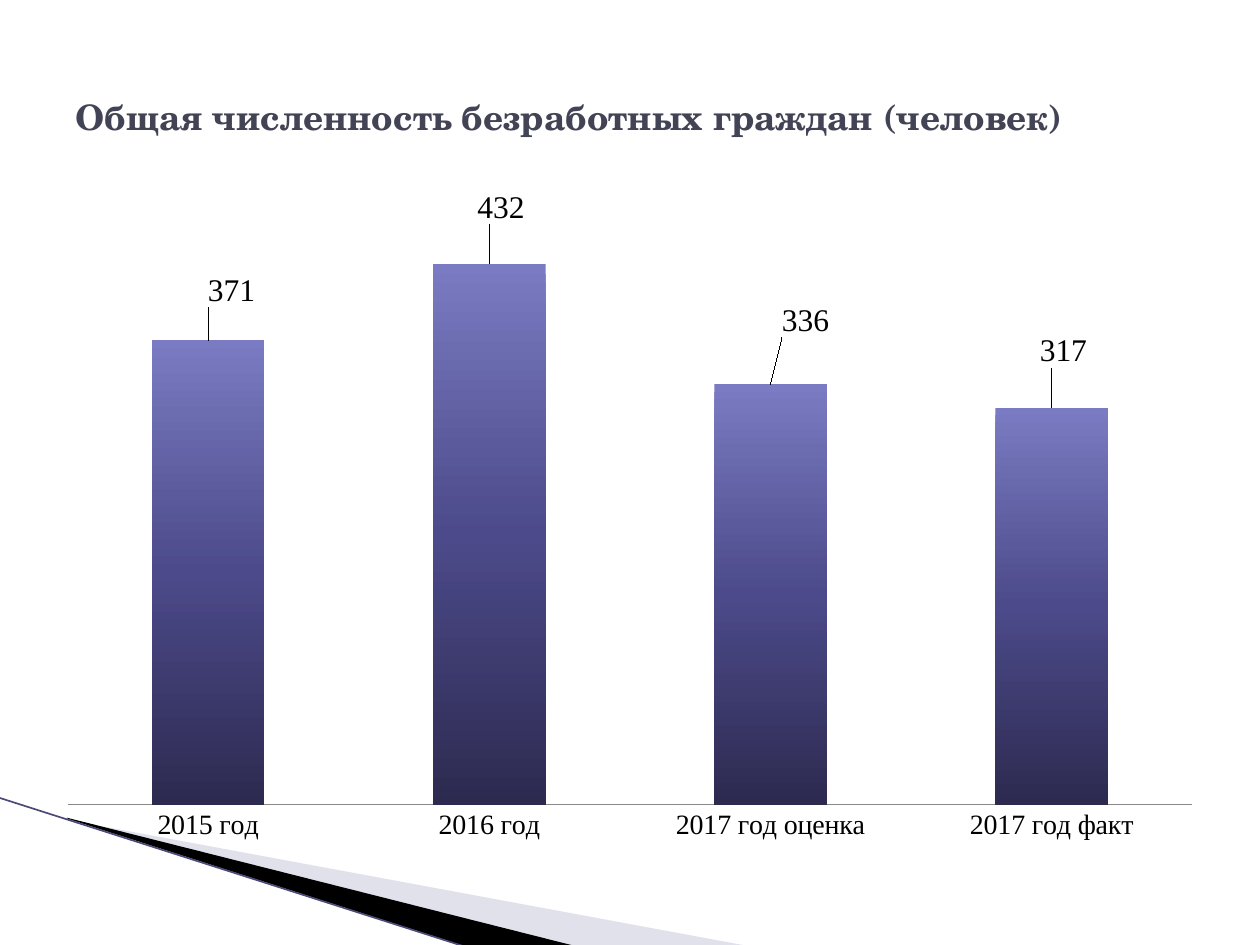
from lxml import etree
from pptx import Presentation
from pptx.chart.data import CategoryChartData
from pptx.dml.color import RGBColor
from pptx.enum.chart import XL_CHART_TYPE, XL_LABEL_POSITION, XL_TICK_MARK
from pptx.enum.shapes import MSO_CONNECTOR
from pptx.enum.text import MSO_ANCHOR, PP_ALIGN
from pptx.oxml import parse_xml
from pptx.oxml.ns import nsdecls, qn
from pptx.util import Pt

COLUMN = XL_CHART_TYPE.COLUMN_CLUSTERED
OUTSIDE = XL_LABEL_POSITION.OUTSIDE_END
NO_TICK = XL_TICK_MARK.NONE
STRAIGHT = MSO_CONNECTOR.STRAIGHT
MIDDLE = MSO_ANCHOR.MIDDLE
LEFT = PP_ALIGN.LEFT

SERIF = "Times New Roman"
DATA = [("2015 год", 371), ("2016 год", 432),
        ("2017 год оценка", 336), ("2017 год факт", 317)]
SHIFTS = [(0.02, -0.04), (0.01, -0.05), (0.03, -0.06), (0.01, -0.05)]
STOPS = [(0, "7A7BC2"), (50, "4C4A8A"), (100, "2D2A50")]


def color(text):
    return RGBColor.from_string(text)


def style(font, name, size, tone="000000", bold=False):
    font.name = name
    font.size = Pt(size)
    font.bold = bold
    font.color.rgb = color(tone)


def wedge(slide, points, tone, alpha=100):
    spots = [(Pt(x), Pt(y)) for x, y in points]
    build = slide.shapes.build_freeform(*spots[0])
    build.add_line_segments(spots[1:], close=True)
    shape = build.convert_to_shape()
    shape.shadow.inherit = False
    shape.line.fill.background()
    shape.fill.solid()
    shape.fill.fore_color.rgb = color(tone)
    if alpha < 100:
        node = shape.fill._xPr.find(".//" + qn("a:srgbClr"))
        etree.SubElement(node, qn("a:alpha"), val=str(alpha * 1000))


def rule(slide, start, end, tone, width):
    line = slide.shapes.add_connector(STRAIGHT, *map(Pt, start + end))
    line.line.color.rgb = color(tone)
    line.line.width = Pt(width)
    etree.SubElement(line._element.spPr, qn("a:effectLst"))


def title(slide, text):
    box = slide.shapes.title
    box.left, box.top, box.width, box.height = map(Pt, (36, 21.6, 648, 90))
    frame = box.text_frame
    frame.vertical_anchor = MIDDLE
    para = frame.paragraphs[0]
    para.alignment = LEFT
    run = para.add_run()
    run.text = text
    style(run.font, "TeX Gyre Schola", 20, "424456", True)


def layout(inner="", **places):
    parts = "".join(f'<c:{key} val="{val}"/>' for key, val in places.items())
    return parse_xml(f'<c:layout {nsdecls("c")}><c:manualLayout>{inner}{parts}'
                     '</c:manualLayout></c:layout>')


def shade(series):
    series.format.fill.gradient()
    stops = "".join(f'<a:gs pos="{pos * 1000}"><a:srgbClr val="{tone}"/></a:gs>'
                    for pos, tone in STOPS)
    fill = parse_xml(f'<a:gradFill {nsdecls("a")} rotWithShape="1"><a:gsLst>{stops}'
                     '</a:gsLst><a:lin ang="5400000" scaled="0"/></a:gradFill>')
    old = series._element.find(".//" + qn("a:gradFill"))
    old.getparent().replace(old, fill)


def label(series):
    labels = series.data_labels
    labels.show_value = True
    labels.number_format = "#,##0"
    labels.number_format_is_linked = False
    labels.position = OUTSIDE
    style(labels.font, SERIF, 18)
    for index, (x, y) in enumerate(SHIFTS):
        mark = series.points[index].data_label
        style(mark.font, SERIF, 18)
        mark.position = OUTSIDE
    nodes = series._element.findall(".//" + qn("c:dLbl"))
    for node, (x, y) in zip(nodes, SHIFTS):
        node.find(qn("c:idx")).addnext(layout(x=x, y=y))


def axes(chart):
    base = chart.category_axis
    base.major_tick_mark = base.minor_tick_mark = NO_TICK
    base.format.line.color.rgb = color("898989")
    base.format.line.width = Pt(0.75)
    style(base.tick_labels.font, SERIF, 16)
    scale = chart.value_axis
    scale.minimum_scale, scale.maximum_scale = 0, 500
    scale.has_major_gridlines = False
    scale.tick_labels.number_format = "#,##0"
    scale.tick_labels.number_format_is_linked = False
    scale.visible = False


def columns(slide):
    data = CategoryChartData(number_format="#,##0")
    data.categories = [name for name, _ in DATA]
    data.add_series("Series 1", [val for _, val in DATA])
    spot = map(Pt, (25.2, 94.3, 669.6, 393.1))
    chart = slide.shapes.add_chart(COLUMN, *spot, data).chart
    chart.has_legend = False
    chart.has_title = False
    style(chart.font, "Noto Sans Mono", 18)
    plot = chart.plots[0]
    plot.gap_width = 150
    plot.vary_by_categories = False
    shade(plot.series[0])
    label(plot.series[0])
    axes(chart)
    area = chart._chartSpace.find(".//" + qn("c:plotArea"))
    for old in area.findall(qn("c:layout")):
        area.remove(old)
    inner = ('<c:layoutTarget val="inner"/><c:xMode val="edge"/>'
             '<c:yMode val="edge"/>')
    area.insert(0, layout(inner, x=0.02, y=0.02, w=0.96, h=0.91))


def main():
    deck = Presentation()
    deck.slide_width, deck.slide_height = Pt(720), Pt(540)
    slide = deck.slides.add_slide(deck.slide_layouts[5])
    wedge(slide, [(39.6, 468.7), (428.4, 540.7), (328.3, 540.7), (39.6, 468)],
          "B6B6D1", 40)
    wedge(slide, [(38.2, 467.3), (329, 540.7), (267.8, 541.4), (38.9, 468)],
          "000000")
    rule(slide, (-0.7, 455.8), (267.1, 541.4), "4B4A78", 0.95)
    columns(slide)
    title(slide, "Общая численность безработных граждан (человек)")
    deck.save("out.pptx")


if __name__ == "__main__":
    main()
